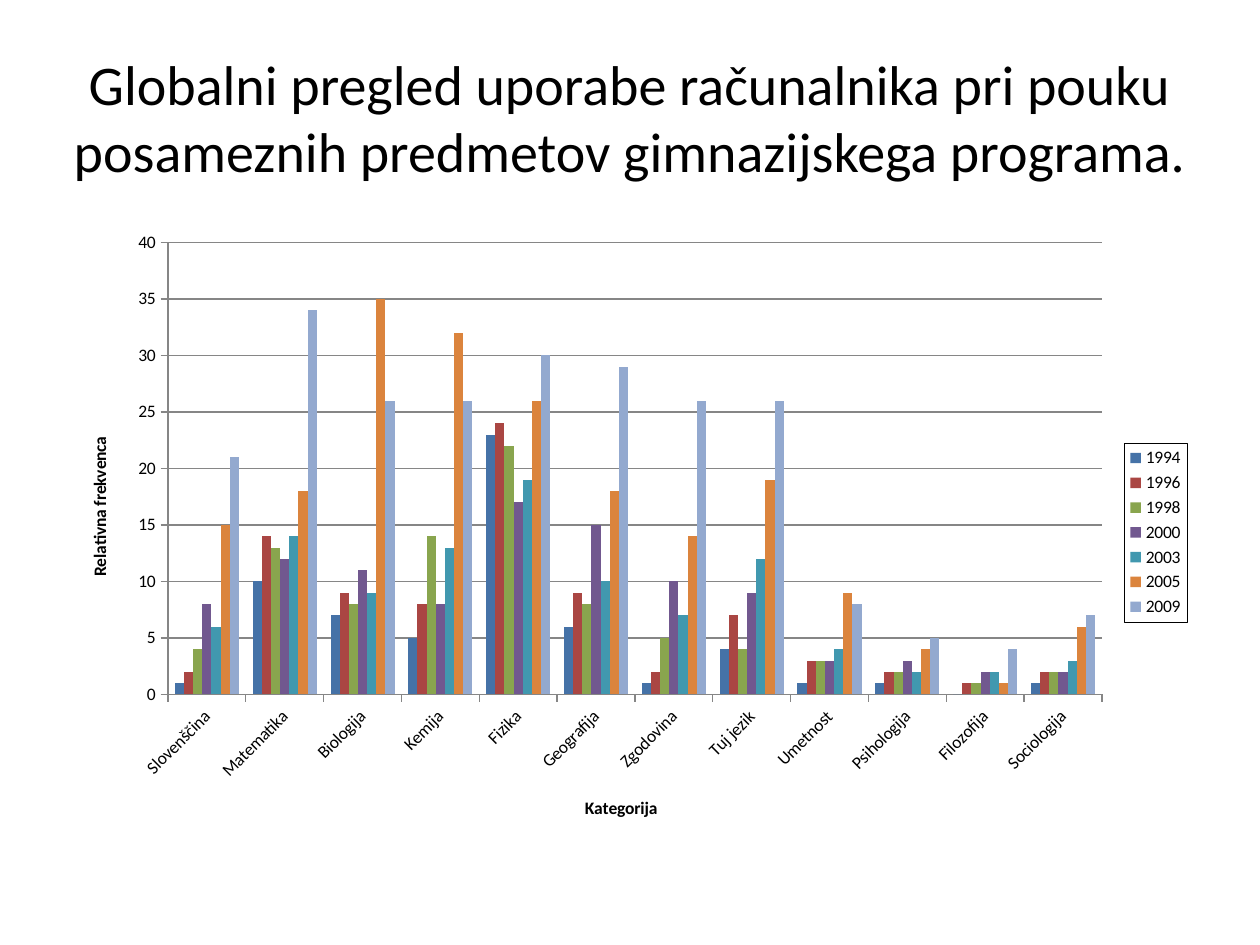
from lxml.etree import SubElement
from pptx import Presentation
from pptx.chart.data import CategoryChartData as ChartData
from pptx.dml.color import RGBColor
from pptx.enum.chart import XL_CHART_TYPE as ChartType, XL_LEGEND_POSITION as LegendPosition, XL_TICK_MARK as TickMark
from pptx.enum.text import MSO_ANCHOR as Anchor, PP_ALIGN as Align
from pptx.oxml import parse_xml
from pptx.oxml.ns import nsdecls, qn
from pptx.util import Pt

COLORS = {
    "text": "000000", "axis": "868686",
    "1994": "4572A7", "1996": "AA4643", "1998": "89A54E", "2000": "71588F",
    "2003": "4198AF", "2005": "DB843D", "2009": "93A9CF",
}
CHART_WIDTH, CHART_HEIGHT = 648, 356.4
SUBJECTS = ["Slovenščina", "Matematika", "Biologija", "Kemija", "Fizika", "Geografija",
            "Zgodovina", "Tuj jezik", "Umetnost", "Psihologija", "Filozofija", "Sociologija"]
FREQUENCIES = {
    "1994": [1, 10, 7, 5, 23, 6, 1, 4, 1, 1, 0, 1],
    "1996": [2, 14, 9, 8, 24, 9, 2, 7, 3, 2, 1, 2],
    "1998": [4, 13, 8, 14, 22, 8, 5, 4, 3, 2, 1, 2],
    "2000": [8, 12, 11, 8, 17, 15, 10, 9, 3, 3, 2, 2],
    "2003": [6, 14, 9, 13, 19, 10, 7, 12, 4, 2, 2, 3],
    "2005": [15, 18, 35, 32, 26, 18, 14, 19, 9, 4, 1, 6],
    "2009": [21, 34, 26, 26, 30, 29, 26, 26, 8, 5, 4, 7],
}


class SlideBuilder:
    """Holds the style and the current slide, and adds each kind of element."""

    def __init__(self, slide, font="Calibri"):
        self.slide = slide
        self.font_name = font

    def color(self, name):
        return RGBColor.from_string(COLORS[name])

    def style_font(self, font, size, bold=False):
        font.name = self.font_name
        font.size = Pt(size)
        font.bold = bold
        font.color.rgb = self.color("text")

    def style_line(self, line):
        line.color.rgb = self.color("axis")
        line.width = Pt(0.75)

    def place(self, element, inner=False, **lengths):
        layout = element.find(qn("c:layout"))
        if layout is None:
            layout = parse_xml(f"<c:layout {nsdecls('c')}/>")
            overlay = element.find(qn("c:overlay"))
            if overlay is None:
                element.insert(0, layout)
            else:
                overlay.addprevious(layout)
        manual = SubElement(layout, qn("c:manualLayout"))
        if inner:
            SubElement(manual, qn("c:layoutTarget")).set("val", "inner")
        for mode in ("xMode", "yMode"):
            SubElement(manual, qn(f"c:{mode}")).set("val", "edge")
        for name, length in lengths.items():
            whole = CHART_WIDTH if name in "xw" else CHART_HEIGHT
            SubElement(manual, qn(f"c:{name}")).set("val", str(Pt(length) / Pt(whole)))

    def title(self, text, left, top, width, height, size):
        frame = self.slide.shapes.add_textbox(Pt(left), Pt(top), Pt(width), Pt(height)).text_frame
        frame.word_wrap = True
        frame.vertical_anchor = Anchor.MIDDLE
        paragraph = frame.paragraphs[0]
        paragraph.alignment = Align.CENTER
        run = paragraph.add_run()
        run.text = text
        self.style_font(run.font, size)

    def axis(self, axis, title, rotation, x, y):
        axis.major_tick_mark = TickMark.OUTSIDE
        axis.minor_tick_mark = TickMark.NONE
        self.style_line(axis.format.line)
        self.style_font(axis.tick_labels.font, 10)
        frame = axis.axis_title.text_frame
        run = frame.paragraphs[0].add_run()
        run.text = title
        self.style_font(run.font, 10, bold=True)
        body = frame._element.find(qn("a:bodyPr"))
        body.set("rot", str(rotation))
        body.set("vert", "horz")
        self.place(axis.axis_title._element, x=x, y=y)

    def legend(self, chart):
        chart.has_legend = True
        legend = chart.legend
        legend.position = LegendPosition.RIGHT
        legend.include_in_layout = False
        self.style_font(legend.font, 10)
        self.place(legend._element, x=606.3, y=127.2, w=36, h=102.3)
        border = parse_xml(
            f'<c:spPr {nsdecls("c", "a")}><a:ln w="3175"><a:solidFill>'
            f'<a:srgbClr val="{COLORS["text"]}"/></a:solidFill></a:ln></c:spPr>')
        legend._element.find(qn("c:overlay")).addnext(border)

    def column_chart(self, left, top):
        data = ChartData()
        data.categories = SUBJECTS
        for year, values in FREQUENCIES.items():
            data.add_series(year, values)
        chart = self.slide.shapes.add_chart(
            ChartType.COLUMN_CLUSTERED, Pt(left), Pt(top), Pt(CHART_WIDTH), Pt(CHART_HEIGHT), data).chart
        chart.has_title = False
        self.style_font(chart.font, 10)
        plot = chart.plots[0]
        plot.gap_width = 150
        plot.overlap = 0
        plot.vary_by_categories = False
        for series in plot.series:
            series.format.fill.solid()
            series.format.fill.fore_color.rgb = self.color(series.name)
        category_axis = chart.category_axis
        self.axis(category_axis, "Kategorija", 0, 296.4, 327.4)
        label_text = category_axis._element.find(qn("c:txPr"))
        label_text.find(qn("a:bodyPr")).set("rot", "-2700000")
        value_axis = chart.value_axis
        self.axis(value_axis, "Relativna frekvenca", -5400000, 12.6, 121.7)
        value_axis.minimum_scale = 0
        value_axis.maximum_scale = 40
        value_axis.major_unit = 5
        value_axis.has_major_gridlines = True
        self.style_line(value_axis.major_gridlines.format.line)
        self.place(chart._chartSpace.chart.plotArea, inner=True, x=60, y=12.6, w=533.7, h=258.3)
        self.legend(chart)


def main():
    presentation = Presentation()
    presentation.slide_width = Pt(720)
    presentation.slide_height = Pt(540)
    builder = SlideBuilder(presentation.slides.add_slide(presentation.slide_layouts[6]))
    builder.title("Globalni pregled uporabe računalnika pri pouku posameznih predmetov gimnazijskega programa.",
                  14, 21.6, 692, 90, 32)
    builder.column_chart(36, 126)
    presentation.save("out.pptx")


if __name__ == "__main__":
    main()
